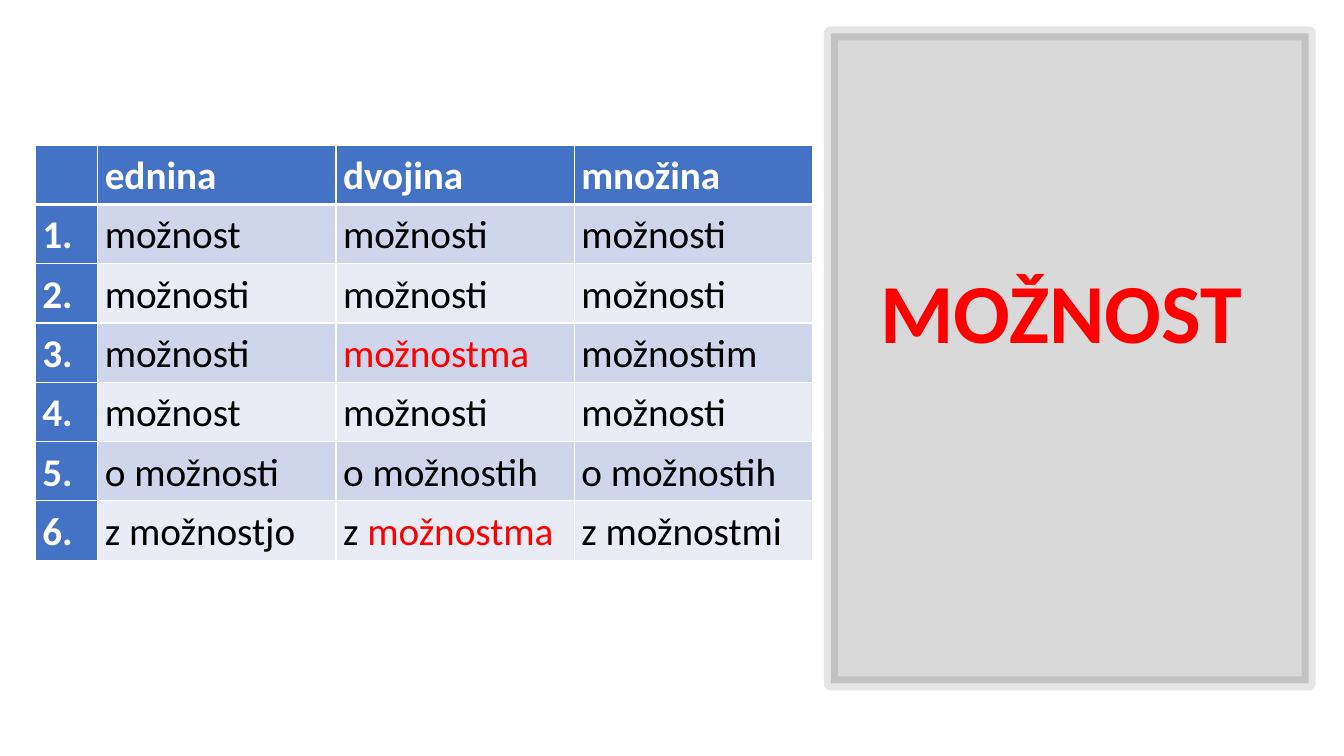
from dataclasses import dataclass

from lxml.etree import SubElement
from pptx import Presentation
from pptx.dml.color import RGBColor
from pptx.enum.shapes import MSO_SHAPE
from pptx.enum.text import MSO_ANCHOR, PP_ALIGN
from pptx.oxml import parse_xml
from pptx.oxml.ns import nsdecls, qn
from pptx.util import Inches, Pt


@dataclass(frozen=True)
class Theme:
    font: str = "Calibri"
    title_size: int = 60
    table_size: int = 28
    black: str = "000000"
    white: str = "FFFFFF"
    red: str = "FF0000"
    header: str = "4472C4"
    bands: tuple = ("CFD5EA", "E9EBF5")


THEME = Theme()

HEADINGS = ["", "ednina", "dvojina", "množina"]
# An asterisk marks the start of a highlighted ending
CASES = [
    ["možnost", "možnosti", "možnosti"],
    ["možnosti", "možnosti", "možnosti"],
    ["možnosti", "*možnostma", "možnostim"],
    ["možnost", "možnosti", "možnosti"],
    ["o možnosti", "o možnostih", "o možnostih"],
    ["z možnostjo", "z *možnostma", "z možnostmi"],
]


def add_span(para, text, size, color, bold):
    span = para.add_run()
    span.text = text
    span.font.name = THEME.font
    span.font.size = Pt(size)
    span.font.bold = bold
    span.font.color.rgb = RGBColor.from_string(color)


def set_alpha(fill, percent):
    color = fill._xPr.find(qn("a:solidFill"))[0]
    SubElement(color, qn("a:alpha"), val=str(percent * 1000))


def set_borders(cell, top, bottom):
    properties = cell._tc.get_or_add_tcPr()
    widths = {"lnL": 1, "lnR": 1, "lnT": top, "lnB": bottom}
    for index, (side, width) in enumerate(widths.items()):
        properties.insert(index, parse_xml(
            f'<a:{side} {nsdecls("a")} w="{Pt(width)}"><a:solidFill>'
            f'<a:srgbClr val="{THEME.white}"/></a:solidFill></a:{side}>'))


def format_cell(cell, text, row, column):
    heading = row == 0 or column == 0
    cell.fill.solid()
    cell.fill.fore_color.rgb = RGBColor.from_string(
        THEME.header if heading else THEME.bands[(row - 1) % 2])
    set_borders(cell, top=3 if row == 1 else 1, bottom=3 if row == 0 else 1)
    cell.margin_left = cell.margin_right = Inches(0.07)
    cell.margin_top = cell.margin_bottom = 0
    para = cell.text_frame.paragraphs[0]
    para.line_spacing = 1.15
    plain, _, highlighted = text.partition("*")
    if plain:
        add_span(para, plain, THEME.table_size,
                 THEME.white if heading else THEME.black, heading)
    if highlighted:
        add_span(para, highlighted, THEME.table_size, THEME.red, False)


def add_declension_table(page, left, top, width, height):
    rows = [HEADINGS] + [[f"{number}.", *forms]
                         for number, forms in enumerate(CASES, start=1)]
    table = page.shapes.add_table(
        len(rows), len(HEADINGS), Inches(left), Inches(top),
        Inches(width), Inches(height)).table
    table.first_col = True
    number_width = 0.62
    form_width = (width - number_width) / (len(HEADINGS) - 1)
    for index, column in enumerate(table.columns):
        column.width = Inches(form_width if index else number_width)
    for row, texts in enumerate(rows):
        table.rows[row].height = Inches(height / len(rows))
        for column, text in enumerate(texts):
            format_cell(table.cell(row, column), text, row, column)


def add_title_panel(page, left, top, width, height):
    # Translucent frame
    panel = page.shapes.add_shape(
        MSO_SHAPE.RECTANGLE, Inches(left), Inches(top),
        Inches(width), Inches(height))
    panel.shadow.inherit = False
    panel.line.width = Pt(10)
    for fill, alpha in ((panel.fill, 15), (panel.line.fill, 10)):
        fill.solid()
        fill.fore_color.rgb = RGBColor.from_string(THEME.black)
        set_alpha(fill, alpha)

    # Title
    title = page.shapes.title
    title.left, title.top = Inches(left + 0.39), Inches(top + 2.07)
    title.width, title.height = Inches(width - 0.57), Inches(1.47)
    frame = title.text_frame
    frame.word_wrap = True
    frame.vertical_anchor = MSO_ANCHOR.MIDDLE
    para = frame.paragraphs[0]
    para.alignment = PP_ALIGN.LEFT
    para.line_spacing = 0.9
    add_span(para, "MOŽNOST", THEME.title_size, THEME.red, True)
    # The title stands in front of its frame
    page.shapes._spTree.append(title._element)


def main():
    deck = Presentation()
    deck.slide_width, deck.slide_height = Inches(13.33), Inches(7.5)
    page = deck.slides.add_slide(deck.slide_layouts.get_by_name("Title Only"))
    add_title_panel(page, 8.24, 0.33, 4.74, 6.45)
    add_declension_table(page, 0.35, 1.44, 7.71, 4.12)
    deck.save("out.pptx")


if __name__ == "__main__":
    main()
